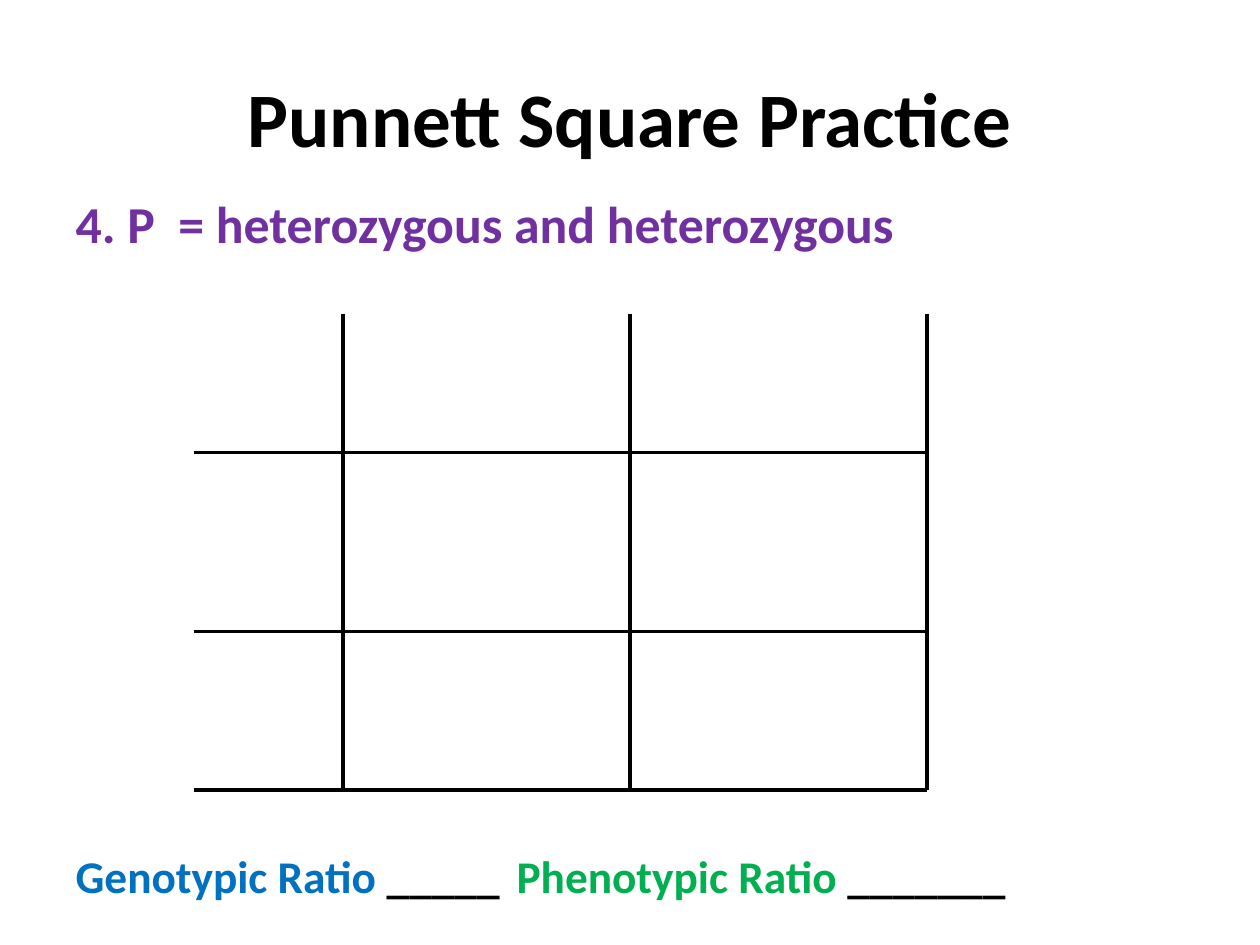
from pptx import Presentation
from pptx.dml.color import RGBColor
from pptx.enum.shapes import MSO_CONNECTOR
from pptx.enum.text import MSO_ANCHOR, MSO_AUTO_SIZE, PP_ALIGN
from pptx.oxml.ns import qn
from pptx.util import Cm, Pt
from lxml.etree import SubElement


def color(value):
    return RGBColor.from_string(value)


def add_text(para, text, size=26, fill="000000", bold=True, font="Calibri"):
    span = para.add_run()
    span.text = text
    span.font.name = font
    span.font.size = Pt(size)
    span.font.bold = bold
    span.font.color.rgb = color(fill)


class SlideBuilder:
    ink = "000000"
    line_width = Pt(2)
    indent = Cm(1.27)

    def __init__(self, deck):
        self.page = deck.slides.add_slide(deck.slide_layouts[1])

    def place(self, box, left, top, width, height):
        box.left, box.top = Cm(left), Cm(top)
        box.width, box.height = Cm(width), Cm(height)
        box.text_frame.word_wrap = True
        box.text_frame.auto_size = MSO_AUTO_SIZE.NONE
        return box.text_frame

    def title(self, text, *area):
        frame = self.place(self.page.shapes.title, *area)
        frame.vertical_anchor = MSO_ANCHOR.MIDDLE
        para = frame.paragraphs[0]
        para.alignment = PP_ALIGN.CENTER
        add_text(para, text, size=44, fill=self.ink)

    def body(self, *area):
        return self.place(self.page.placeholders[1], *area)

    def plain_paragraph(self, para, space_before=0, tab=None):
        para.alignment = PP_ALIGN.LEFT
        para.space_before = Pt(space_before)
        properties = para._p.get_or_add_pPr()
        properties.set("marL", str(self.indent))
        properties.set("indent", "0")
        SubElement(properties, qn("a:buNone"))
        if tab:
            tabs = SubElement(properties, qn("a:tabLst"))
            SubElement(tabs, qn("a:tab"), pos=str(Cm(tab)), algn="l")

    def grid(self, columns, rows, left, top):
        group = self.page.shapes.add_group_shape()
        right, bottom = columns[-1], rows[-1]
        for row in rows:
            self.line(group, left, row, right, row)
        for column in columns:
            self.line(group, column, top, column, bottom)

    def line(self, group, *ends):
        rule = group.shapes.add_connector(
            MSO_CONNECTOR.STRAIGHT, *(Cm(end) for end in ends))
        rule.line.color.rgb = color(self.ink)
        rule.line.width = self.line_width
        SubElement(rule._element.spPr, qn("a:effectLst"))


def main():
    deck = Presentation()
    deck.slide_width, deck.slide_height = Cm(25.4), Cm(19.05)
    slide = SlideBuilder(deck)
    slide.title("Punnett Square Practice", 1.27, 0.76, 22.86, 3.18)

    frame = slide.body(0, 3.73, 25.4, 15.32)
    question = frame.paragraphs[0]
    slide.plain_paragraph(question)
    add_text(question, "4. P  = heterozygous and heterozygous",
             size=29.6, fill="7030A0")

    ratios = frame.add_paragraph()
    slide.plain_paragraph(ratios, space_before=340, tab=11.48)
    for text, fill in (("Genotypic Ratio ", "0070C0"), ("_____\t", "000000"),
                       ("Phenotypic Ratio ", "00B050"), ("_______", "000000")):
        add_text(ratios, text, size=25.9, fill=fill)

    slide.grid(columns=(6.91, 12.7, 18.69), rows=(9.12, 12.73, 15.93),
               left=3.91, top=6.32)
    deck.save("out.pptx")


if __name__ == "__main__":
    main()
